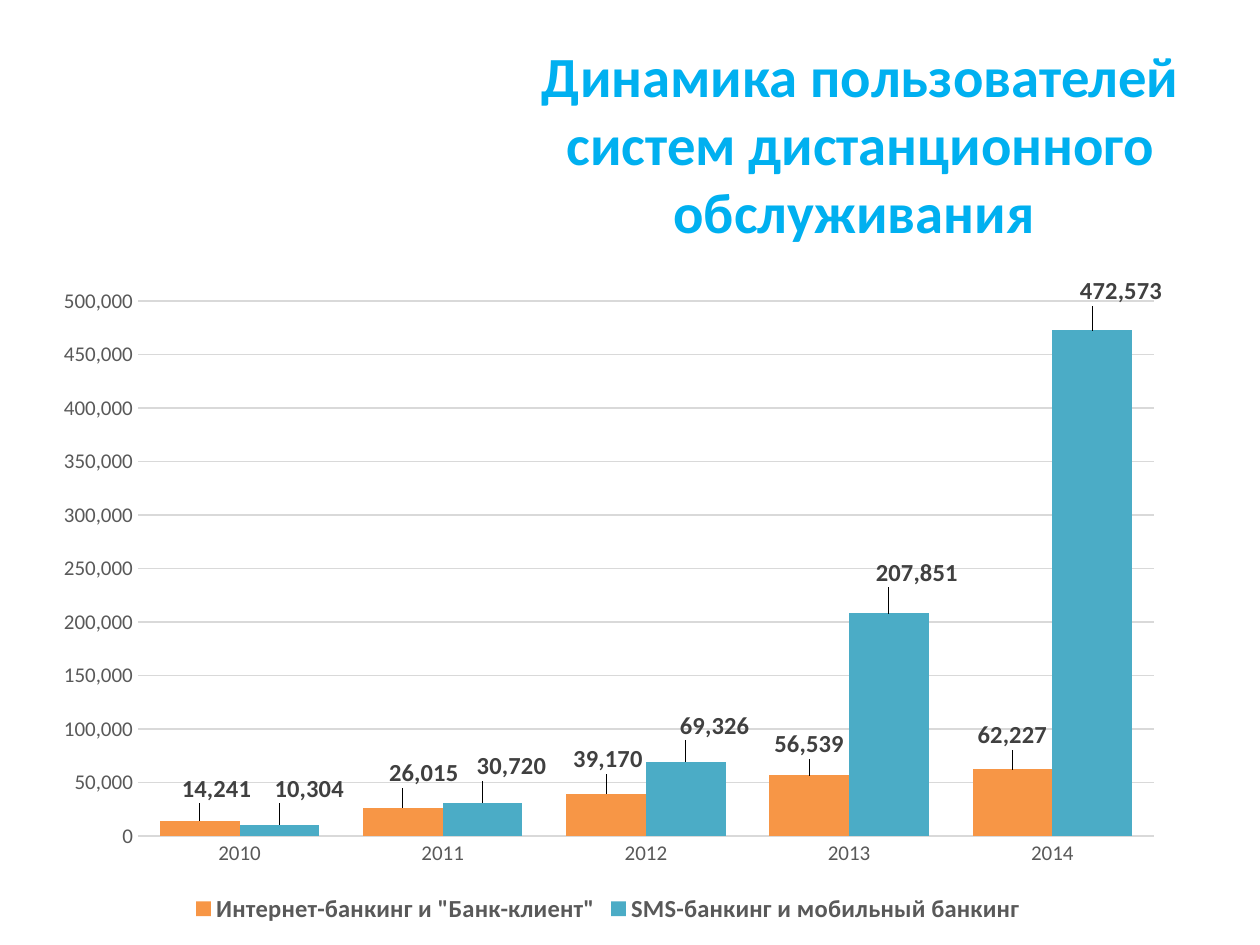
from dataclasses import dataclass

from lxml import etree
from pptx import Presentation
from pptx import util as u
from pptx.chart.data import CategoryChartData
from pptx.dml.color import RGBColor
from pptx.enum import chart as ch, text
from pptx.oxml import ns

PX = 914400 / 126
CHART_BOX = (40, 276, 1136, 653)
PLOT_BOX = (98, 25, 1016, 535)
YEARS = ["2010", "2011", "2012", "2013", "2014"]
SERIES = [
    ('Интернет-банкинг и "Банк-клиент"', "F79646",
     [14241, 26015, 39170, 56539, 62227],
     [(17, -12), (21, -15), (2, -15), (0, -11), (0, -14)]),
    ("SMS-банкинг и мобильный банкинг", "4BACC6",
     [10304, 30720, 69326, 207851, 472573],
     [(30, -16), (29, -17), (29, -16), (28, -21), (29, -19)]),
]


@dataclass(frozen=True)
class Theme:
    """Colours and type sizes of the slide."""
    font: str = "Calibri"
    title: str = "00B0F0"
    muted: str = "595959"
    label: str = "404040"
    grid: str = "D9D9D9"
    title_size: float = 32.4
    axis_size: int = 12
    label_size: int = 14


def emu(pixels):
    """Turn pixels into EMU."""
    return u.Emu(round(pixels * PX))


def manual_layout(**settings):
    """Build a chart layout element from its settings."""
    layout = etree.Element(ns.qn("c:layout"))
    manual = etree.SubElement(layout, ns.qn("c:manualLayout"))
    for name, value in settings.items():
        etree.SubElement(manual, ns.qn(f"c:{name}")).set("val", str(value))
    return layout


class SlideBuilder:
    """Holds the theme and the current slide."""

    def __init__(self, slide, theme):
        self.slide = slide
        self.theme = theme

    def style(self, font, size, color, bold=False):
        """Apply the theme typeface with a size and colour."""
        font.name = self.theme.font
        font.size = u.Pt(size)
        font.bold = bold
        font.color.rgb = RGBColor.from_string(color)

    def title(self, wording, box):
        """Fill and place the title placeholder."""
        shape = self.slide.shapes.title
        shape.left, shape.top, shape.width, shape.height = map(emu, box)
        frame = shape.text_frame
        frame.text = wording
        frame.word_wrap = True
        frame.auto_size = text.MSO_AUTO_SIZE.NONE
        frame.vertical_anchor = text.MSO_ANCHOR.MIDDLE
        paragraph = frame.paragraphs[0]
        paragraph.alignment = text.PP_ALIGN.CENTER
        self.style(paragraph.runs[0].font, self.theme.title_size,
                   self.theme.title, True)

    def column_chart(self, box, plot_box):
        """Add the clustered column chart."""
        data = CategoryChartData(number_format="#,##0")
        data.categories = YEARS
        for name, _, values, _ in SERIES:
            data.add_series(name, values)
        chart = self.slide.shapes.add_chart(
            ch.XL_CHART_TYPE.COLUMN_CLUSTERED, *map(emu, box), data).chart
        chart.has_title = False
        chart.font.name = self.theme.font
        self.axes(chart)
        self.legend(chart)
        plot = chart.plots[0]
        plot.gap_width = 55
        plot.overlap = 0
        plot.vary_by_categories = False
        for series, (_, color, _, shifts) in zip(plot.series, SERIES):
            series.format.fill.solid()
            series.format.fill.fore_color.rgb = RGBColor.from_string(color)
            self.labels(series, shifts, box)
        x, y, width, height = plot_box
        area = chart._chartSpace.chart.plotArea
        for old in area.findall(ns.qn("c:layout")):
            area.remove(old)
        area.insert(0, manual_layout(
            layoutTarget="inner", xMode="edge", yMode="edge",
            x=x / box[2], y=y / box[3], w=width / box[2], h=height / box[3]))

    def axes(self, chart):
        """Format both axes and the gridlines."""
        for axis in (chart.category_axis, chart.value_axis):
            axis.major_tick_mark = axis.minor_tick_mark = ch.XL_TICK_MARK.NONE
            axis.format.line.fill.background()
            self.style(axis.tick_labels.font, self.theme.axis_size,
                       self.theme.muted)
        axis = chart.value_axis
        axis.minimum_scale, axis.maximum_scale = 0, 500000
        axis.major_unit = 50000
        axis.tick_labels.number_format = "#,##0"
        axis.tick_labels.number_format_is_linked = False
        line = axis.major_gridlines.format.line
        line.width = u.Pt(0.75)
        line.color.rgb = RGBColor.from_string(self.theme.grid)

    def legend(self, chart):
        """Place the legend below the plot."""
        chart.has_legend = True
        chart.legend.position = ch.XL_LEGEND_POSITION.BOTTOM
        chart.legend.include_in_layout = False
        self.style(chart.legend.font, self.theme.label_size,
                   self.theme.muted, True)

    def labels(self, series, shifts, box):
        """Show the values, each shifted from its column end."""
        labels = series.data_labels
        labels.show_value = True
        labels.number_format = "#,##0"
        labels.number_format_is_linked = False
        labels.position = ch.XL_LABEL_POSITION.OUTSIDE_END
        self.style(labels.font, self.theme.label_size, self.theme.label, True)
        for index, (across, down) in enumerate(shifts):
            label = series.points[index].data_label
            label.position = ch.XL_LABEL_POSITION.OUTSIDE_END
            self.style(label.font, self.theme.label_size,
                       self.theme.label, True)
        for element, (across, down) in zip(
                labels._element.findall(ns.qn("c:dLbl")), shifts):
            element.insert(1, manual_layout(x=across / box[2],
                                            y=down / box[3]))


def main():
    """Build and save the presentation."""
    presentation = Presentation()
    presentation.slide_width = emu(1260)
    presentation.slide_height = emu(945)
    slide = presentation.slides.add_slide(presentation.slide_layouts[5])
    builder = SlideBuilder(slide, Theme())
    builder.title("Динамика пользователей систем дистанционного обслуживания ",
                  (524, 38, 673, 210))
    builder.column_chart(CHART_BOX, PLOT_BOX)
    presentation.save("out.pptx")


if __name__ == "__main__":
    main()
